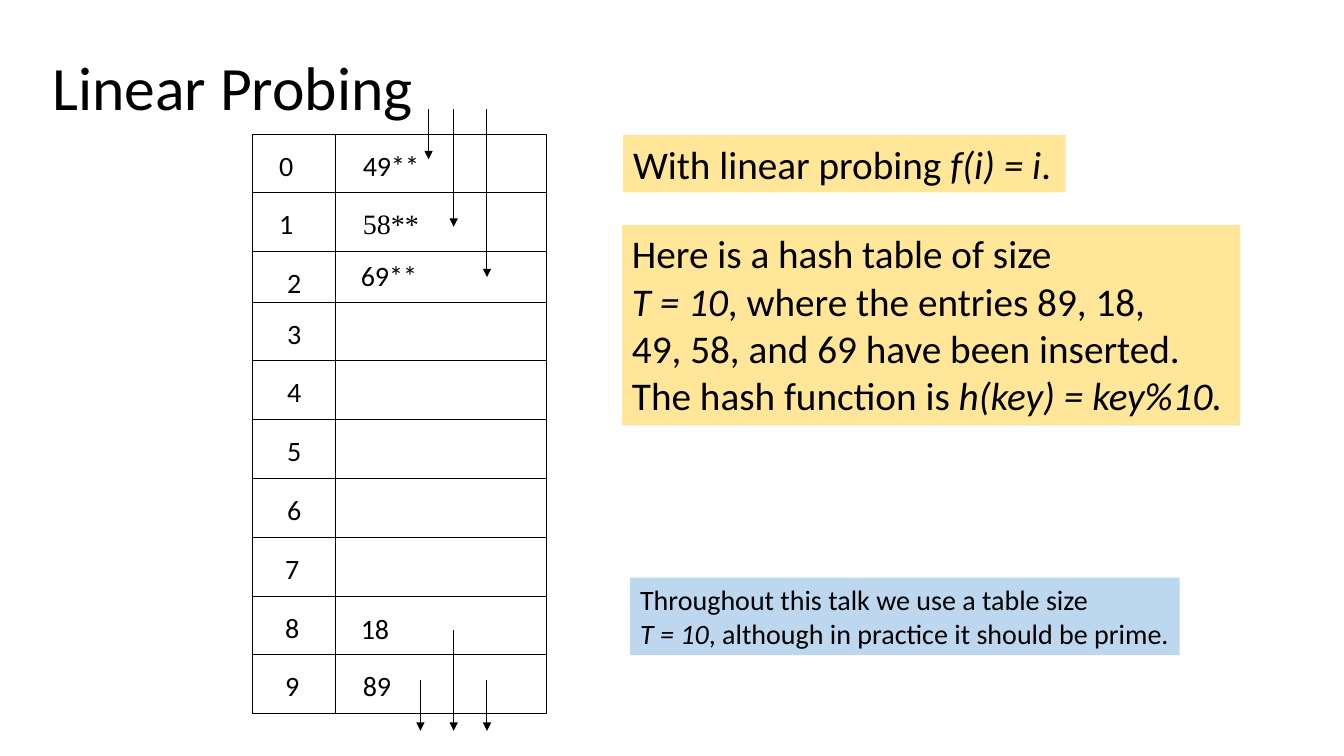
from dataclasses import dataclass

import pptx
import pptx.dml.color
import pptx.enum.shapes
import pptx.enum.text
import pptx.oxml
import pptx.oxml.ns
import pptx.util
from pptx.util import Inches


@dataclass(frozen=True)
class Theme:
    font: str = "Calibri"
    serif: str = "Times New Roman"
    ink: str = "000000"
    yellow: str = "FFE699"
    blue: str = "BDD7EE"
    title: int = 44
    large: int = 28
    body: int = 20
    line: float = 0.75


THEME = Theme()

TABLE_LEFT, TABLE_TOP, TABLE_WIDTH = 2.5, 1.33, 2.92
DIVIDER_X = 3.33
ROW_HEIGHTS = [7 / 12] * 2 + [0.5] + [7 / 12] * 7
LABEL_LEFTS = [2.67] * 2 + [2.75] * 5 + [2.73] * 3
LABEL_DROP = 0.09

# text, left, top, width, font
ENTRIES = [
    ("49**", 3.5, 1.42, 0.77, THEME.font),
    ("58**", 3.5, 2.0, 0.76, THEME.serif),
    ("69**", 3.48, 2.52, 0.77, THEME.font),
    ("18", 3.48, 6.02, 0.49, THEME.font),
    ("89", 3.5, 6.58, 0.49, THEME.font),
]

# x, start y, end y of each probe
PROBES = [
    (4.25, 1.08, 1.58),
    (4.5, 1.08, 2.25),
    (4.83, 1.08, 2.75),
    (4.17, 6.75, 7.25),
    (4.5, 6.25, 7.25),
    (4.83, 6.75, 7.25),
]


def rgb(value):
    return pptx.dml.color.RGBColor.from_string(value)


def write(shape, paragraphs, size, font=THEME.font, wrap=False):
    """Fill a shape with paragraphs, each a list of (text, italic) runs."""
    tf = shape.text_frame
    tf.word_wrap = wrap
    tf.vertical_anchor = pptx.enum.text.MSO_ANCHOR.TOP
    for i, runs in enumerate(paragraphs):
        p = tf.add_paragraph() if i else tf.paragraphs[0]
        p.alignment = pptx.enum.text.PP_ALIGN.LEFT
        p.font.name = font
        p.font.size = pptx.util.Pt(size)
        p.font.color.rgb = rgb(THEME.ink)
        for text, italic in runs:
            r = p.add_run()
            r.text = text
            if italic:
                r.font.italic = True
    return tf


def add_title(s, text):
    sp = s.shapes.add_textbox(Inches(0.42), Inches(0.17), Inches(11.5), Inches(1.45))
    tf = write(sp, [[(text, False)]], THEME.title, wrap=True)
    tf.vertical_anchor = pptx.enum.text.MSO_ANCHOR.MIDDLE
    tf.paragraphs[0].line_spacing = 0.9


def add_label(s, text, left, top, width, font=THEME.font):
    sp = s.shapes.add_textbox(Inches(left), Inches(top), Inches(width), Inches(0.44))
    write(sp, [[(text, False)]], THEME.body, font)


def add_rect(s, left, top, width, height):
    sp = s.shapes.add_shape(pptx.enum.shapes.MSO_SHAPE.RECTANGLE,
                            Inches(left), Inches(top), Inches(width), Inches(height))
    sp.shadow.inherit = False
    return sp


def add_panel(s, left, top, width, height, fill, paragraphs, size):
    sp = add_rect(s, left, top, width, height)
    sp.fill.solid()
    sp.fill.fore_color.rgb = rgb(fill)
    sp.line.fill.background()
    write(sp, paragraphs, size)


def add_line(s, x1, y1, x2, y2, arrow=False):
    line = s.shapes.add_connector(pptx.enum.shapes.MSO_CONNECTOR.STRAIGHT,
                                  Inches(x1), Inches(y1), Inches(x2), Inches(y2))
    line.line.color.rgb = rgb(THEME.ink)
    line.line.width = pptx.util.Pt(THEME.line)
    if arrow:
        tail = pptx.oxml.parse_xml(
            f'<a:tailEnd {pptx.oxml.ns.nsdecls("a")} type="triangle"/>')
        line.line._get_or_add_ln().append(tail)
    effects = pptx.oxml.parse_xml(f'<a:effectLst {pptx.oxml.ns.nsdecls("a")}/>')
    line._element.spPr.append(effects)


def add_hash_table(s):
    """Draw the frame, the row rules, the indexes and the stored keys."""
    height = sum(ROW_HEIGHTS)
    frame = add_rect(s, TABLE_LEFT, TABLE_TOP, TABLE_WIDTH, height)
    frame.fill.background()
    frame.line.color.rgb = rgb(THEME.ink)
    frame.line.width = pptx.util.Pt(THEME.line)
    add_line(s, DIVIDER_X, TABLE_TOP, DIVIDER_X, TABLE_TOP + height)
    top = TABLE_TOP
    for index, (row_height, left) in enumerate(zip(ROW_HEIGHTS, LABEL_LEFTS)):
        if index:
            add_line(s, TABLE_LEFT, top, TABLE_LEFT + TABLE_WIDTH, top)
        add_label(s, str(index), left, top + LABEL_DROP, 0.34)
        top += row_height
    for entry in ENTRIES:
        add_label(s, *entry)


def main():
    prs = pptx.Presentation()
    prs.slide_width, prs.slide_height = Inches(13.33), Inches(7.5)
    s = prs.slides.add_slide(prs.slide_layouts[6])

    add_title(s, "Linear Probing")
    add_hash_table(s)
    for x, start, end in PROBES:
        add_line(s, x, start, x, end, arrow=True)

    add_panel(s, 6.18, 1.34, 4.39, 0.57, THEME.yellow, [
        [("With linear probing ", False), ("f(i) = i", True), (".", False)],
    ], THEME.large)
    add_panel(s, 6.17, 2.23, 6.13, 1.99, THEME.yellow, [
        [("Here is a hash table of size", False)],
        [("T = 10", True), (", where the entries 89, 18,", False)],
        [("49, 58, and 69 have been inserted.", False)],
        [("The hash function is ", False), ("h(key) = key%10.", True)],
    ], THEME.large)
    add_panel(s, 6.25, 5.73, 5.45, 0.77, THEME.blue, [
        [("Throughout this talk we use a table size", False)],
        [("T = 10", True), (", although in practice it should be prime.", False)],
    ], THEME.body)

    prs.save("out.pptx")


if __name__ == "__main__":
    main()
